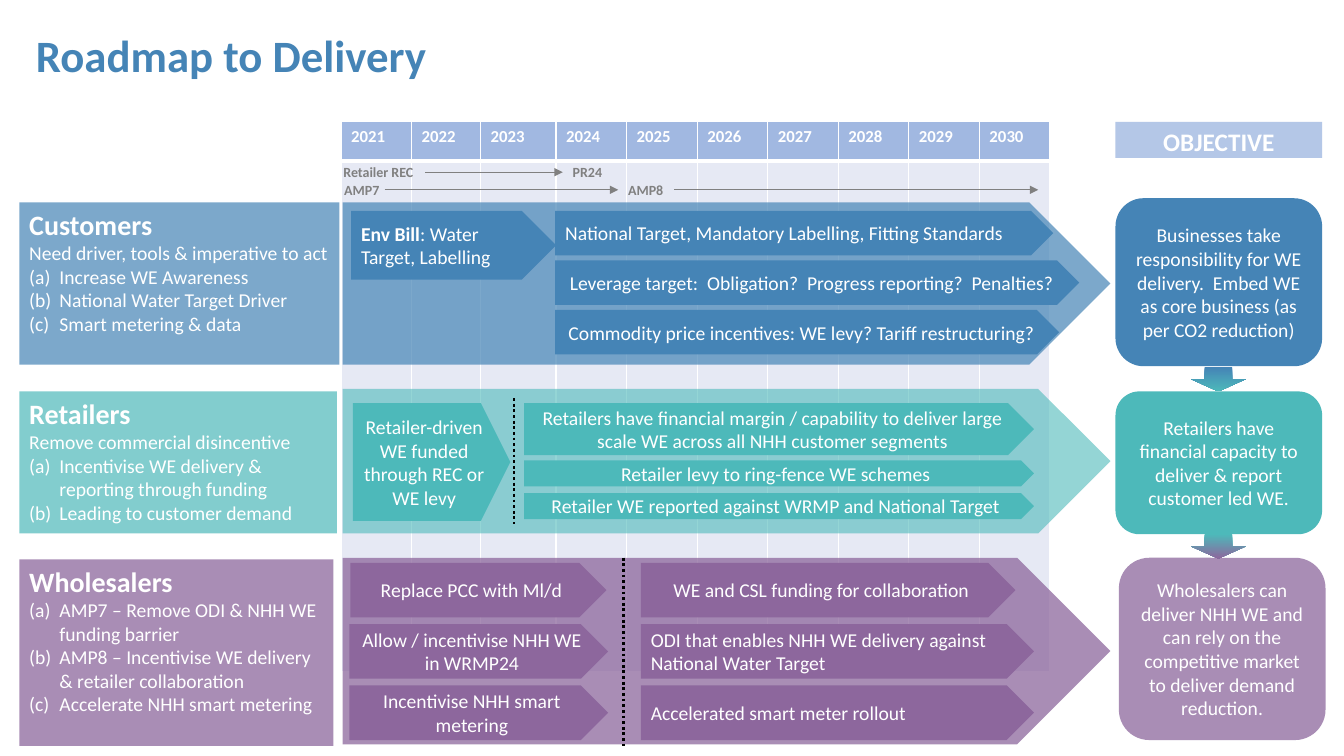
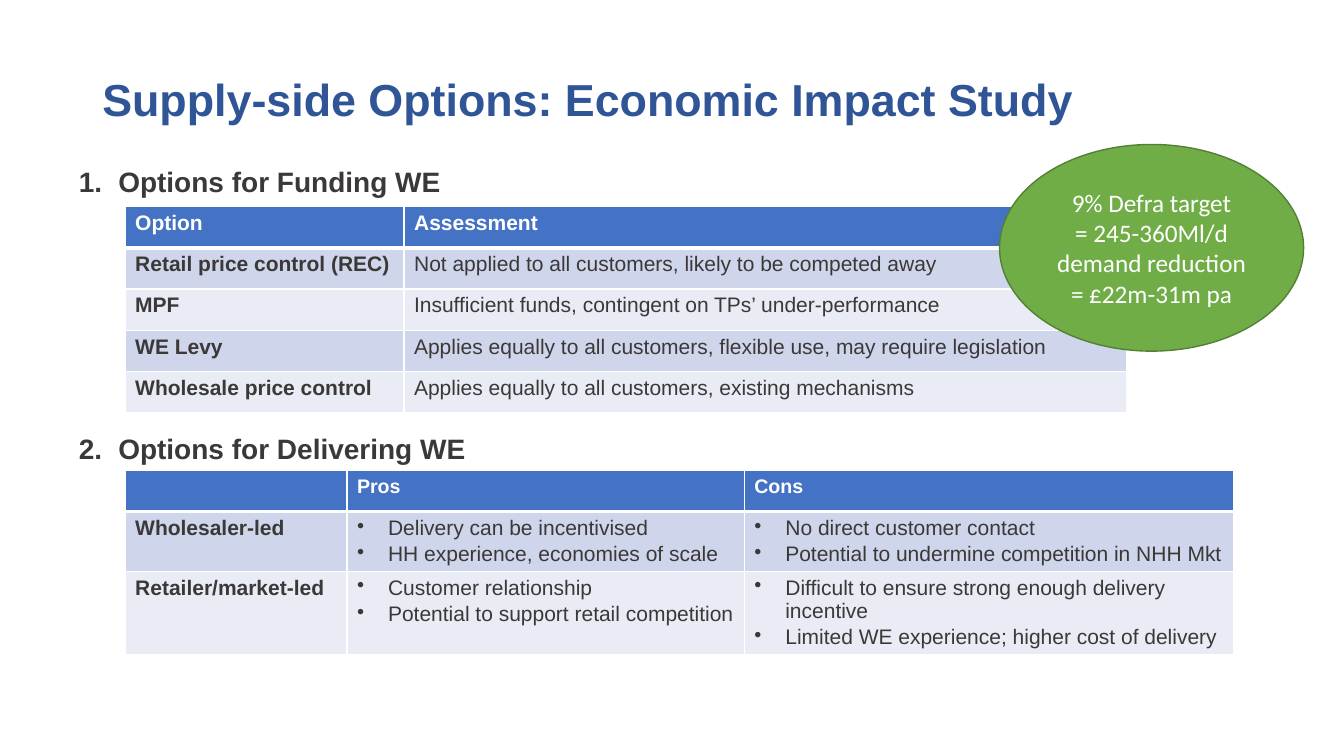
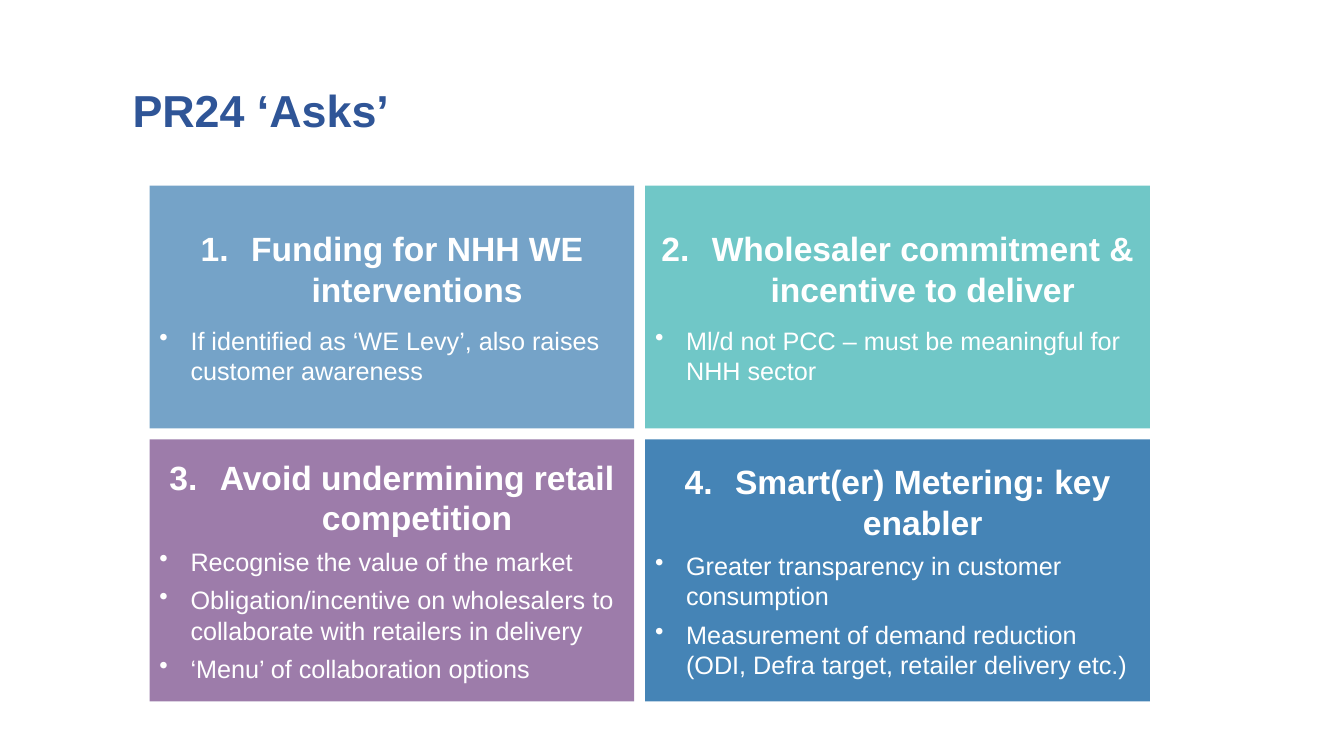
"""Three slides on delivering water efficiency: roadmap, supply-side options and asks."""
from lxml.etree import SubElement
from pptx import Presentation
from pptx.dml.color import RGBColor
from pptx.enum.dml import MSO_LINE
from pptx.enum.shapes import MSO_CONNECTOR, MSO_SHAPE as Kind
from pptx.enum.text import MSO_ANCHOR as Anchor, PP_ALIGN as Align
from pptx.oxml.ns import qn
from pptx.util import Emu, Pt

INK = {
    "blue": "4584B6", "teal": "4DB9BA", "purple": "8D679D", "title": "2F5597",
    "header": "4472C4", "band": "CFD5EA", "pale": "E9EBF5", "sky": "B4C7E7",
    "green": "70AD47", "leaf": "538035", "dark": "3B3838", "grey": "808080",
    "white": "FFFFFF", "black": "000000",
}
INK = {name: RGBColor.from_string(value) for name, value in INK.items()}
DOT = (3.7, "a:buChar", {"char": "•"})
LETTER = (3.6, "a:buAutoNum", {"type": "alphaLcParenBoth"})

deck = Presentation()
deck.slide_width, deck.slide_height = Emu(12192000), Emu(6858000)
UNIT = deck.slide_width // 160
roadmap, options, asks = [deck.slides.add_slide(deck.slide_layouts[6]) for _ in range(3)]


def write(frame, lines, font, ink, align=Align.LEFT, anchor=Anchor.TOP, before=0):
    """Fill a text frame from lines of (mark, size, (text, bold), ...)."""
    frame.word_wrap = True
    frame.vertical_anchor = anchor
    for index, (mark, size, *spans) in enumerate(lines):
        para = frame.add_paragraph() if index else frame.paragraphs[0]
        if mark:
            hang, tag, settings = mark
            marked = para._p.get_or_add_pPr()
            marked.set("marL", str(int(hang * UNIT)))
            marked.set("indent", str(-int(hang * UNIT)))
            SubElement(marked, qn(tag), settings)
        para.alignment = Align.LEFT if mark == DOT else align
        if index and before:
            para.space_before = Pt(before)
        for text, bold in spans:
            span = para.add_run()
            span.text = text
            span.font.name, span.font.size, span.font.bold = font, Pt(size), bold
            span.font.color.rgb = INK[ink]


def draw(page, kind, spot, fill=None, alpha=100):
    """Add a plain shape, or a text box when there is no kind, on the grid."""
    place = [Emu(int(length * UNIT)) for length in spot]
    if kind is None:
        return page.shapes.add_textbox(*place)
    shape = page.shapes.add_shape(kind, *place)
    shape.shadow.inherit = False
    shape.line.fill.background()
    if fill:
        shape.fill.solid()
        shape.fill.fore_color.rgb = INK[fill]
        if alpha < 100:
            colour = shape._element.spPr.find(qn("a:solidFill"))[0]
            SubElement(colour, qn("a:alpha"), val=str(alpha * 1000))
    return shape


years = [str(year) for year in range(2021, 2031)]
funding = [
    ["Option", "Assessment"],
    ["Retail price control (REC)", "Not applied to all customers, likely to be competed away"],
    ["MPF", "Insufficient funds, contingent on TPs’ under-performance"],
    ["WE Levy", "Applies equally to all customers, flexible use, may require legislation"],
    ["Wholesale price control", "Applies equally to all customers, existing mechanisms"],
]
delivery = [
    ["", "Pros", "Cons"],
    ["Wholesaler-led",
     ["Delivery can be incentivised", "HH experience, economies of scale"],
     ["No direct customer contact", "Potential to undermine competition in NHH Mkt"]],
    ["Retailer/market-led",
     ["Customer relationship", "Potential to support retail competition"],
     ["Difficult to ensure strong enough delivery incentive",
      "Limited WE experience; higher cost of delivery"]],
]
tables = [
    (roadmap, 40.6, 14.5, [8.4, 8.2, 9] + [8.4] * 7, [4.7, 60.7],
     [years, [""] * 10], "Calibri", 12, 50),
    (options, 14.9, 24.6, [33.2, 86], [4.9] * 5, funding, "Arial", 15, 100),
    (options, 14.9, 56, [26.4, 47.3, 58.3], [4.9, 7.1, 9.9], delivery, "Arial", 14, 100),
]
for page, left, top, widths, heights, rows, font, head_size, alpha in tables:
    place = [Emu(int(n * UNIT)) for n in (left, top, sum(widths), sum(heights))]
    table = page.shapes.add_table(len(heights), len(widths), *place).table
    for column, width in zip(table.columns, widths):
        column.width = Emu(int(width * UNIT))
    for r, (row, height) in enumerate(zip(rows, heights)):
        table.rows[r].height = Emu(int(height * UNIT))
        for c, content in enumerate(row):
            cell = table.cell(r, c)
            settings = cell._tc.get_or_add_tcPr()
            for side in "LRTB":
                thick = (r, side) in ((0, "B"), (1, "T"))
                edge = SubElement(settings, qn("a:ln" + side), w=str(Pt(3 if thick else 1)))
                SubElement(SubElement(edge, qn("a:solidFill")), qn("a:srgbClr"), val="FFFFFF")
            cell.fill.solid()
            cell.fill.fore_color.rgb = INK["header" if r == 0 else "band" if r % 2 else "pale"]
            if alpha < 100:
                colour = settings.find(qn("a:solidFill"))[0]
                SubElement(colour, qn("a:alpha"), val=str(alpha * 1000))
            size = 15 if r else head_size
            if isinstance(content, list):
                lines = [(DOT, size, (text, False)) for text in content]
            else:
                lines = [(None, size, (content, r == 0 or c == 0))] if content else []
            write(cell.text_frame, lines, font, "dark" if r else "white", before=2)

titles = [
    (roadmap, (3.1, 3.1, 60, 7.7), "Calibri", "blue", "Roadmap to Delivery"),
    (options, (11, 3.4, 138, 17.4), "Arial", "title",
     "Supply-side Options: Economic Impact Study"),
    (asks, (14.6, 4.8, 134.4, 17.4), "Arial", "title", "PR24 ‘Asks’"),
]
for page, spot, font, ink, text in titles:
    frame = draw(page, None, spot).text_frame
    write(frame, [(None, 32, (text, True))], font, ink, anchor=Anchor.MIDDLE)
    frame.paragraphs[0].line_spacing = 0.9

lanes = [
    ("blue", 70, 70, 100, (2.3, 24.1, 38.1, 19.3), (40.8, 24.1, 91.4, 19.3),
     (132.8, 23.6, 24.6, 20),
     "Customers", "Need driver, tools & imperative to act",
     ["Increase WE Awareness", "National Water Target Driver", "Smart metering & data"],
     "Businesses take responsibility for WE delivery.  Embed WE as core business "
     "(as per CO2 reduction)"),
    ("teal", 70, 60, 100, (2.3, 46.6, 37.8, 16.9), (40.8, 46.3, 91.4, 17.2),
     (132.8, 46.6, 24.6, 17),
     "Retailers", "Remove commercial disincentive",
     ["Incentivise WE delivery & reporting through funding", "Leading to customer demand"],
     "Retailers have financial capacity to deliver & report customer led WE."),
    ("purple", 75, 75, 75, (2.3, 66.6, 37.4, 22.2), (40.8, 66.4, 91.4, 22.2),
     (133.2, 66.4, 24.6, 21.7),
     "Wholesalers", "",
     ["AMP7 – Remove ODI & NHH WE funding barrier",
      "AMP8 – Incentivise WE delivery & retailer collaboration",
      "Accelerate NHH smart metering"],
     "Wholesalers can deliver NHH WE and can rely on the competitive market to deliver "
     "demand reduction."),
]
for (fill, card_alpha, plate_alpha, goal_alpha, card_spot, plate_spot, goal_spot,
     name, need, points, goal) in lanes:
    card = draw(roadmap, Kind.RECTANGLE, card_spot, fill, card_alpha)
    lines = [(None, 20, (name, True))]
    lines += [(None, 14, (need, False))] if need else []
    lines += [(LETTER, 14, (point, False)) for point in points]
    write(card.text_frame, lines, "Calibri", "white")
    draw(roadmap, Kind.PENTAGON, plate_spot, fill, plate_alpha)
    objective = draw(roadmap, Kind.ROUNDED_RECTANGLE, goal_spot, fill, goal_alpha)
    write(objective.text_frame, [(None, 14, (goal, False))], "Calibri", "white",
          Align.CENTER, Anchor.MIDDLE)

heading = draw(roadmap, Kind.RECTANGLE, (132.8, 14.5, 24.6, 4.3), "sky")
write(heading.text_frame, [(None, 18, ("OBJECTIVE", True))], "Calibri", "white", Align.CENTER)

for top, upper, lower in ((43.7, "blue", "teal"), (63.6, "teal", "purple")):
    arrow = draw(roadmap, Kind.DOWN_ARROW, (141.8, top, 6.5, 2.9))
    arrow.fill.gradient()
    arrow.fill.gradient_angle = 270
    for stop, position, ink in zip(arrow.fill.gradient_stops, (0, 1), (upper, lower)):
        stop.position = position
        stop.color.rgb = INK[ink]

customer_rows = [25.1 + 5.9 * n for n in range(3)]
wholesale_rows = [67 + 7.3 * n for n in range(3)]
bars = [
    ("blue", (41.8, 25.1, 24.4, 8.2), Align.LEFT, "Env Bill", ": Water Target, Labelling"),
    ("blue", (66.1, customer_rows[0], 59.3, 5.3), Align.LEFT, "",
     "National Target, Mandatory Labelling, Fitting Standards"),
    ("blue", (66.1, customer_rows[1], 62.4, 5.3), Align.CENTER, "",
     "Leverage target:  Obligation?  Progress reporting?  Penalties?"),
    ("blue", (66.1, customer_rows[2], 60, 5.3), Align.CENTER, "",
     "Commodity price incentives: WE levy? Tariff restructuring?"),
    ("teal", (42, 48, 18.75, 14), Align.CENTER, "",
     "Retailer-driven WE funded through REC or WE levy"),
    ("teal", (62.4, 48, 60.7, 6.2), Align.CENTER, "",
     "Retailers have financial margin / capability to deliver large scale WE across all "
     "NHH customer segments"),
    ("teal", (62.4, 54.8, 60.7, 3.1), Align.CENTER, "",
     "Retailer levy to ring-fence WE schemes"),
    ("teal", (62.4, 58.7, 60.7, 3.1), Align.CENTER, "",
     "Retailer WE reported against WRMP and National Target"),
    ("purple", (41.7, wholesale_rows[0], 30.5, 6.5), Align.CENTER, "", "Replace PCC with Ml/d"),
    ("purple", (41.6, wholesale_rows[1], 30.8, 6.5), Align.CENTER, "",
     "Allow / incentivise NHH WE in WRMP24"),
    ("purple", (41.6, wholesale_rows[2], 30.8, 6.5), Align.CENTER, "",
     "Incentivise NHH smart metering"),
    ("purple", (76.3, wholesale_rows[0], 44.6, 6.5), Align.CENTER, "",
     "WE and CSL funding for collaboration"),
    ("purple", (76.3, wholesale_rows[1], 46.8, 6.5), Align.LEFT, "",
     "ODI that enables NHH WE delivery against National Water Target"),
    ("purple", (76.3, wholesale_rows[2], 46.8, 6.5), Align.LEFT, "",
     "Accelerated smart meter rollout"),
]
for fill, spot, align, strong, text in bars:
    bar = draw(roadmap, Kind.PENTAGON, spot, fill)
    if spot[3] == 14:
        bar.adjustments[0] = 0.25
    spans = [(strong, True)] if strong else []
    write(bar.text_frame, [(None, 14, *spans, (text, False))], "Calibri", "white",
          align, Anchor.MIDDLE)

labels = {}
for text, left, top, width in (("Retailer REC", 39.7, 18.9, 10.9), ("PR24", 67, 18.9, 6.4),
                               ("AMP7", 39.8, 21, 6.7), ("AMP8", 73.6, 21, 6.7)):
    labels[text] = draw(roadmap, None, (left, top, width, 3.2))
    write(labels[text].text_frame, [(None, 10, (text, True))], "Calibri", "grey")

lines = [
    ((61.2, 47.4, 61.2, 62.4), "black", 2, None, None),
    ((74.2, 66.4, 74.2, 88.8), "black", 2, None, None),
    ((50.6, 20.5, 67, 20.5), "grey", 0.5, "Retailer REC", "PR24"),
    ((45.8, 22.6, 73.6, 22.6), "grey", 0.5, None, "AMP8"),
    ((80.3, 22.6, 123.6, 22.6), "grey", 0.5, "AMP8", None),
]
for ends, ink, weight, source, target in lines:
    line = roadmap.shapes.add_connector(
        MSO_CONNECTOR.STRAIGHT, *[Emu(int(n * UNIT)) for n in ends])
    line.line.color.rgb = INK[ink]
    line.line.width = Pt(weight)
    if source:
        line.begin_connect(labels[source], 3)
    if target:
        line.end_connect(labels[target], 1)
    if ink == "black":
        line.line.dash_style = MSO_LINE.ROUND_DOT
    else:
        SubElement(line._element.spPr.find(qn("a:ln")), qn("a:tailEnd"), type="triangle")
    SubElement(line._element.spPr, qn("a:effectLst"))

for number, top, text in ((1, 19, "Options for Funding WE"), (2, 50.8, "Options for Delivering WE")):
    mark = (4.7, "a:buAutoNum", {"type": "arabicPeriod", "startAt": str(number)})
    box = draw(options, None, (8.2, top, 60, 5.3))
    write(box.text_frame, [(mark, 20, (text, True))], "Arial", "dark")

target = draw(options, Kind.OVAL, (119, 17.2, 36.2, 24.6), "green")
target.line.color.rgb = INK["leaf"]
target.line.width = Pt(1)
facts = ["9% Defra target", "= 245-360Ml/d demand reduction", "= £22m-31m pa"]
write(target.text_frame, [(None, 18, (fact, False)) for fact in facts], "Calibri", "white",
      Align.CENTER, Anchor.MIDDLE)

panels = [
    ("blue", 74, 12, "Funding for NHH WE interventions",
     ["If identified as ‘WE Levy’, also raises customer awareness"]),
    ("teal", 80, 12, "Wholesaler commitment & incentive to deliver",
     ["Ml/d not PCC – must be meaningful for NHH sector"]),
    ("purple", 86, 6, "Avoid undermining retail competition",
     ["Recognise the value of the market",
      "Obligation/incentive on wholesalers to collaborate with retailers in delivery",
      "‘Menu’ of collaboration options"]),
    ("blue", 100, 6, "Smart(er) Metering: key enabler",
     ["Greater transparency in customer consumption",
      "Measurement of demand reduction (ODI, Defra target, retailer delivery etc.)"]),
]
columns = [(17.8, 57.7), (76.8, 60.1)]
bands = [(22.1, 28.9), (52.3, 31.2)]
for index, (fill, alpha, before, ask, points) in enumerate(panels):
    (left, width), (top, height) = columns[index % 2], bands[index // 2]
    panel = draw(asks, Kind.RECTANGLE, (left, top, width, height), fill, alpha)
    mark = (6, "a:buAutoNum", {"type": "arabicPeriod", "startAt": str(index + 1)})
    lines = [(mark, 24, (ask, True))] + [(DOT, 18, (point, False)) for point in points]
    write(panel.text_frame, lines, "Arial", "white", Align.CENTER, Anchor.MIDDLE, before)

deck.save("out.pptx")
